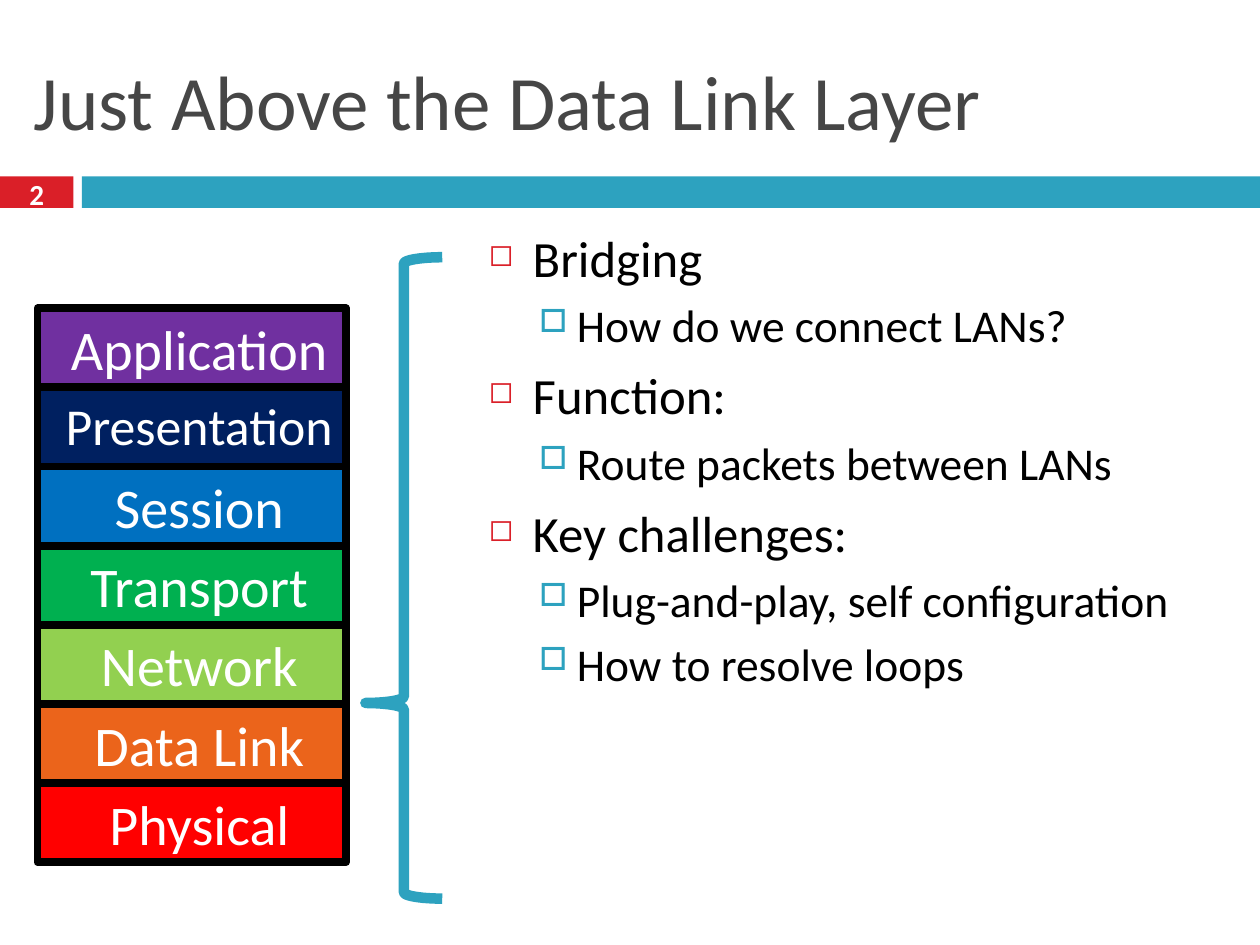
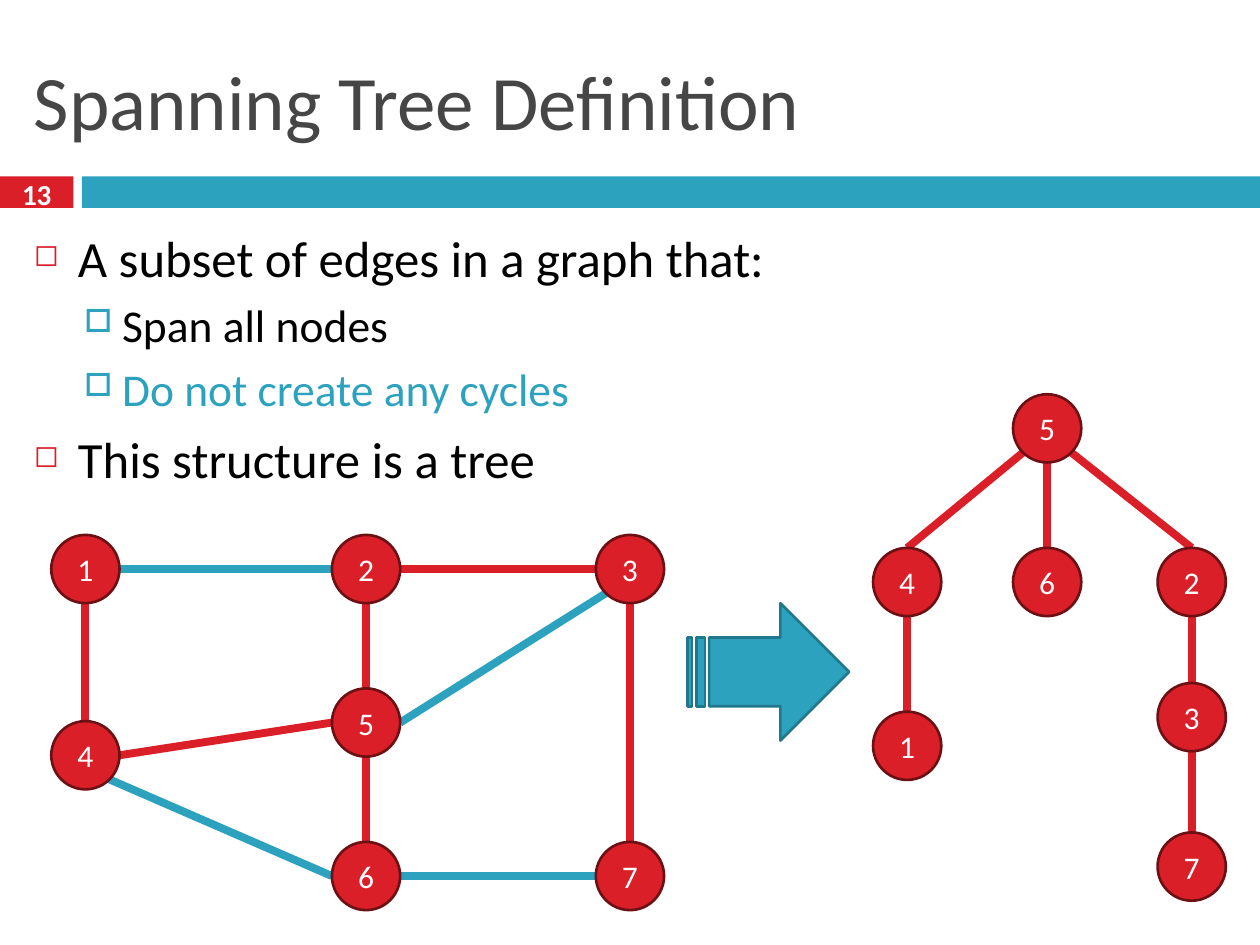
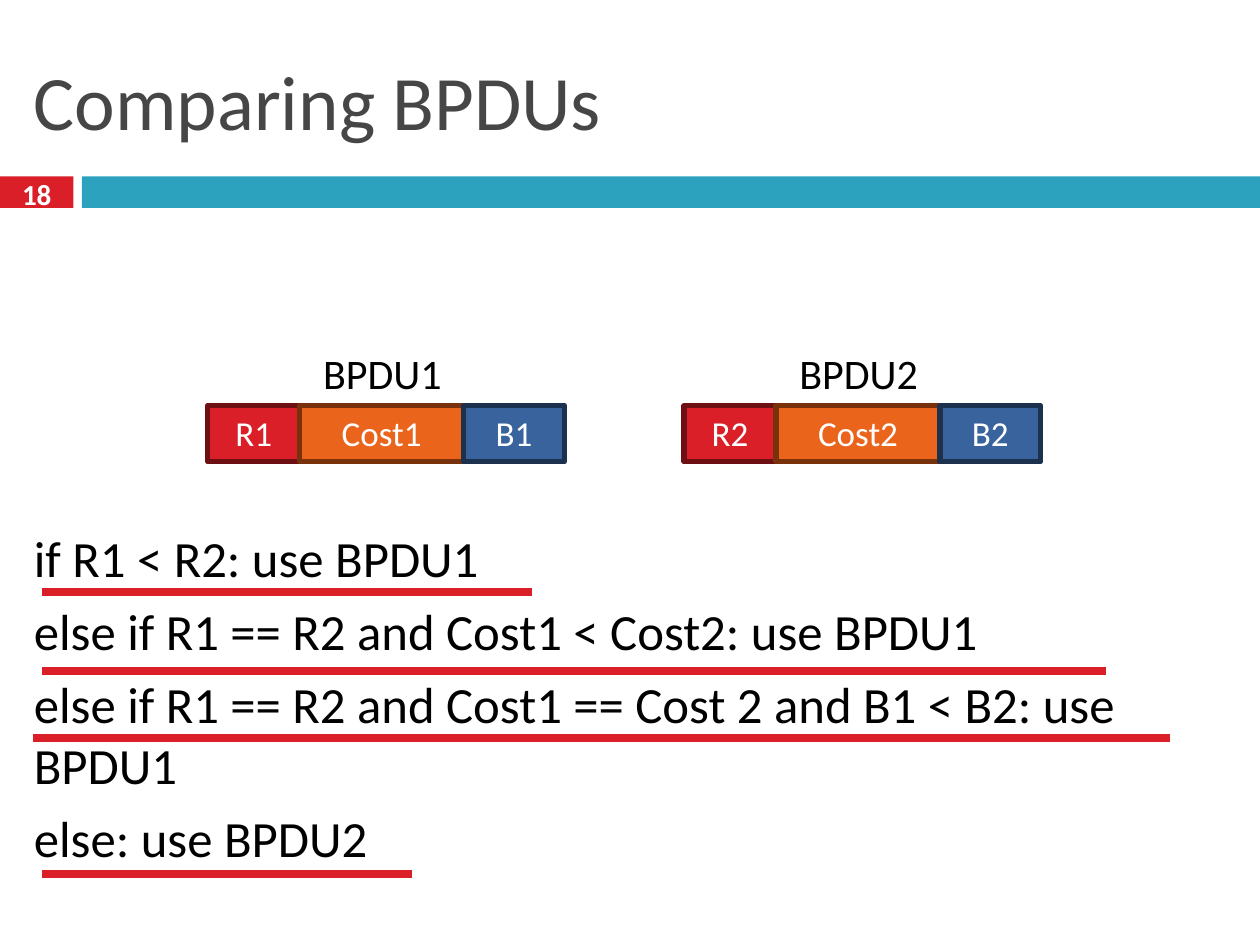
"""Build three lecture slides about bridging and spanning trees."""
from dataclasses import dataclass
from math import sqrt

from lxml import etree
from pptx import Presentation
from pptx.dml.color import RGBColor
from pptx.enum.shapes import MSO_CONNECTOR, MSO_SHAPE
from pptx.enum.text import MSO_ANCHOR, PP_ALIGN
from pptx.oxml.ns import qn
from pptx.util import Pt

RECT, OVAL = MSO_SHAPE.RECTANGLE, MSO_SHAPE.OVAL
BRACE, ARROW = MSO_SHAPE.LEFT_BRACE, MSO_SHAPE.STRIPED_RIGHT_ARROW
STRAIGHT = MSO_CONNECTOR.STRAIGHT
TOP, MIDDLE = MSO_ANCHOR.TOP, MSO_ANCHOR.MIDDLE
LEFT, CENTER = PP_ALIGN.LEFT, PP_ALIGN.CENTER


@dataclass(frozen=True)
class Theme:
    """Colours, font and type sizes of the presentation."""
    font: str = "Calibri"
    red: str = "DA1F28"
    dark_red: str = "6D1014"
    teal: str = "2DA2BF"
    dark_teal: str = "21788D"
    orange: str = "EB641B"
    dark_orange: str = "78310B"
    blue: str = "39639D"
    dark_blue: str = "1C314E"
    heading: str = "464646"
    black: str = "000000"
    white: str = "FFFFFF"
    title_size: float = 44
    number_size: float = 16.6
    body_size: float = 29
    detail_size: float = 26
    layer_size: float = 32
    tight_layer_size: float = 29.6
    node_size: float = 18
    field_size: float = 20
    label_size: float = 24
    stroke: float = 4.5


THEME = Theme()

TOPIC = dict(size=THEME.body_size, before=7, margin=25.2, hanging=25.2,
             bullet=("◻", THEME.red, 60))
DETAIL = dict(size=THEME.detail_size, before=5.5, margin=50.4, hanging=21.6,
              bullet=("□", THEME.teal, 70))
CODE = dict(size=THEME.body_size, before=7)

NODE = 39
DIAGONAL = 1 / sqrt(2)
SITES = {"top": (0, -1), "bottom": (0, 1), "left": (-1, 0), "right": (1, 0),
         "lower left": (-DIAGONAL, DIAGONAL),
         "lower right": (DIAGONAL, DIAGONAL)}


def write(frame, text, *, size, color=THEME.black, bold=False, align=LEFT,
          anchor=TOP, before=0, margin=0, hanging=0, bullet=None):
    """Add one formatted paragraph to a text frame."""
    paragraph = frame.add_paragraph() if frame.text else frame.paragraphs[0]
    frame.vertical_anchor = anchor
    paragraph.alignment = align
    paragraph.space_before = Pt(before)
    run = paragraph.add_run()
    run.text = text
    run.font.name = THEME.font
    run.font.size = Pt(size)
    run.font.bold = bold
    run.font.color.rgb = RGBColor.from_string(color)
    properties = paragraph._p.get_or_add_pPr()
    properties.set("marL", str(Pt(margin)))
    properties.set("indent", str(Pt(-hanging)))
    if bullet:
        mark, mark_color, percent = bullet
        tint = etree.SubElement(properties, qn("a:buClr"))
        etree.SubElement(tint, qn("a:srgbClr"), val=mark_color)
        etree.SubElement(properties, qn("a:buSzPct"), val=str(percent * 1000))
        etree.SubElement(properties, qn("a:buChar"), char=mark)


class Deck:
    """Holds the theme, the presentation and the current slide."""

    def __init__(self, theme):
        """Start an empty 10 by 7.5 inch presentation."""
        self.theme = theme
        self.presentation = Presentation()
        self.presentation.slide_width = Pt(720)
        self.presentation.slide_height = Pt(540)
        self.slide = None

    def start(self, title, number):
        """Add a slide with its title, bands and number."""
        theme = self.theme
        blank = self.presentation.slide_layouts[6]
        self.slide = self.presentation.slides.add_slide(blank)
        self.shape(RECT, 0, 100.8, 42, 18, fill=theme.red)
        self.shape(RECT, 46.8, 100.8, 673.2, 18, fill=theme.teal)
        write(self.frame(12.24, 18, 696, 78), title, size=theme.title_size,
              color=theme.heading, anchor=MIDDLE)
        write(self.frame(0, 98.6, 42, 24), number, size=theme.number_size,
              color=theme.white, bold=True, align=CENTER, anchor=MIDDLE)

    def frame(self, left, top, width, height, wrap=True):
        """Add a text box and return its text frame."""
        box = self.slide.shapes.add_textbox(Pt(left), Pt(top), Pt(width), Pt(height))
        box.text_frame.word_wrap = wrap
        return box.text_frame

    def body(self, left, top, width, height, paragraphs):
        """Add a text box of (text, format) paragraphs."""
        frame = self.frame(left, top, width, height)
        for text, style in paragraphs:
            write(frame, text, **style)

    def shape(self, kind, left, top, width, height, fill=None, outline=None,
              weight=1.5, group=None):
        """Add a preset shape to the slide or to a group."""
        parent = group or self.slide
        shape = parent.shapes.add_shape(kind, Pt(left), Pt(top), Pt(width), Pt(height))
        shape.shadow.inherit = False
        if fill:
            shape.fill.solid()
            shape.fill.fore_color.rgb = RGBColor.from_string(fill)
        else:
            shape.fill.background()
        if outline:
            shape.line.color.rgb = RGBColor.from_string(outline)
            shape.line.width = Pt(weight)
        else:
            shape.line.fill.background()
        return shape

    def line(self, start, end, color):
        """Add a straight line between two points."""
        connector = self.slide.shapes.add_connector(
            STRAIGHT, *(Pt(value) for value in (*start, *end)))
        connector.line.color.rgb = RGBColor.from_string(color)
        connector.line.width = Pt(self.theme.stroke)
        etree.SubElement(connector.element.spPr, qn("a:effectLst"))

    def graph(self, centers, edges):
        """Draw edges between named sites of the nodes, then the nodes."""
        theme = self.theme
        for first, first_site, second, second_site, color in edges:
            ends = [[middle + NODE / 2 * offset
                     for middle, offset in zip(centers[name], SITES[site])]
                    for name, site in ((first, first_site), (second, second_site))]
            self.line(*ends, color)
        for name, (x, y) in centers.items():
            node = self.shape(OVAL, x - NODE / 2, y - NODE / 2, NODE, NODE,
                              fill=theme.red, outline=theme.dark_red)
            write(node.text_frame, name, size=theme.node_size,
                  color=theme.white, align=CENTER, anchor=MIDDLE)

    def packet(self, left, label, fields):
        """Draw a labelled row of grouped packet fields."""
        theme = self.theme
        styles = ((52.56, theme.red, theme.dark_red),
                  (93.6, theme.orange, theme.dark_orange),
                  (57.6, theme.blue, theme.dark_blue))
        group = self.slide.shapes.add_group_shape()
        edge = left
        for text, (width, fill, outline) in zip(fields, styles):
            field = self.shape(RECT, edge, 231.84, width, 32, fill=fill,
                               outline=outline, weight=3, group=group)
            write(field.text_frame, text, size=theme.field_size,
                  color=theme.white, align=CENTER)
            edge += width
        write(self.frame(left + 51.84, 195.12, 95.76, 36, wrap=False), label,
              size=theme.label_size, align=CENTER)


def layer_slide(deck):
    """Show the layer stack and the tasks of bridging."""
    theme = deck.theme
    deck.start("Just Above the Data Link Layer", "2")
    deck.body(272.16, 126, 436.32, 401.76, (
        ("Bridging", TOPIC),
        ("How do we connect LANs?", DETAIL),
        ("Function:", TOPIC),
        ("Route packets between LANs", DETAIL),
        ("Key challenges:", TOPIC),
        ("Plug-and-play, self configuration", DETAIL),
        ("How to resolve loops", DETAIL)))
    layers = (("Application", "7030A0"), ("Presentation", "002060"),
              ("Session", "0070C0"), ("Transport", "00B050"),
              ("Network", "92D050"), ("Data Link", theme.orange),
              ("Physical", "FF0000"))
    pitch = 45.2
    for row, (name, color) in enumerate(layers):
        layer = deck.shape(RECT, 21.4, 176.2 + row * pitch, 176.4, pitch,
                           fill=color, outline=theme.black, weight=theme.stroke)
        size = theme.tight_layer_size if name == "Presentation" else theme.layer_size
        write(layer.text_frame, name, size=size, color=theme.white,
              align=CENTER, before=size / 5, margin=8.64)
    brace = deck.shape(BRACE, 208.8, 147, 43.9, 366.5, outline=theme.teal, weight=6)
    brace.adjustments[0] = 0.083
    brace.adjustments[1] = 0.695


def tree_slide(deck):
    """Show a graph and the spanning tree taken from it."""
    theme = deck.theme
    red, teal = theme.red, theme.teal
    deck.start("Spanning Tree Definition", "13")
    deck.body(12.24, 126, 696, 165, (
        ("A subset of edges in a graph that:", TOPIC),
        ("Span all nodes", DETAIL),
        ("Do not create any cycles", {**DETAIL, "color": teal}),
        ("This structure is a tree", TOPIC)))
    west, center, east = 48.8, 209.2, 360
    upper, middle, lower = 325.2, 412.9, 500.6
    deck.graph(
        {"1": (west, upper), "4": (west, 431.6), "2": (center, upper),
         "5": (center, middle), "6": (center, lower), "3": (east, upper),
         "7": (east, lower)},
        (("1", "right", "2", "left", teal),
         ("5", "right", "3", "lower left", teal),
         ("6", "right", "7", "left", teal),
         ("4", "lower right", "6", "left", teal),
         ("2", "right", "3", "left", red),
         ("2", "bottom", "5", "top", red),
         ("5", "bottom", "6", "top", red),
         ("3", "bottom", "7", "top", red),
         ("1", "bottom", "4", "top", red),
         ("4", "right", "5", "left", red)))
    left, trunk, right, children = 518.4, 598.4, 681, 332.6
    deck.graph(
        {"5": (trunk, 244.8), "1": (left, 426.2), "4": (left, children),
         "2": (right, children), "6": (trunk, children), "3": (right, 409.8),
         "7": (right, 495.2)},
        (("2", "bottom", "3", "top", red),
         ("2", "top", "5", "lower right", red),
         ("5", "bottom", "6", "top", red),
         ("3", "bottom", "7", "top", red),
         ("1", "top", "4", "bottom", red),
         ("4", "top", "5", "lower left", red)))
    deck.shape(ARROW, 393, 344.7, 92.2, 78.5, fill=teal, outline=theme.dark_teal)


def comparison_slide(deck):
    """Show the rules for choosing between two BPDUs."""
    deck.start("Comparing BPDUs", "18")
    rules = ("if R1 < R2: use BPDU1",
             "else if R1 == R2 and Cost1 < Cost2: use BPDU1",
             "else if R1 == R2 and Cost1 == Cost 2 and B1 < B2: use BPDU1",
             "else: use BPDU2")
    deck.body(12.24, 297.36, 696, 230.4, [(rule, CODE) for rule in rules])
    deck.packet(118.8, "BPDU1", ("R1", "Cost1", "B1"))
    deck.packet(390.96, "BPDU2", ("R2", "Cost2", "B2"))
    for start, end, height in ((24, 304, 338.4), (24, 632, 383.3),
                               (19, 668.8, 421.8), (24, 235.4, 499.2)):
        deck.line((start, height), (end, height), deck.theme.red)


def main():
    """Build all slides and save the file."""
    deck = Deck(THEME)
    layer_slide(deck)
    tree_slide(deck)
    comparison_slide(deck)
    deck.presentation.save("out.pptx")


if __name__ == "__main__":
    main()
